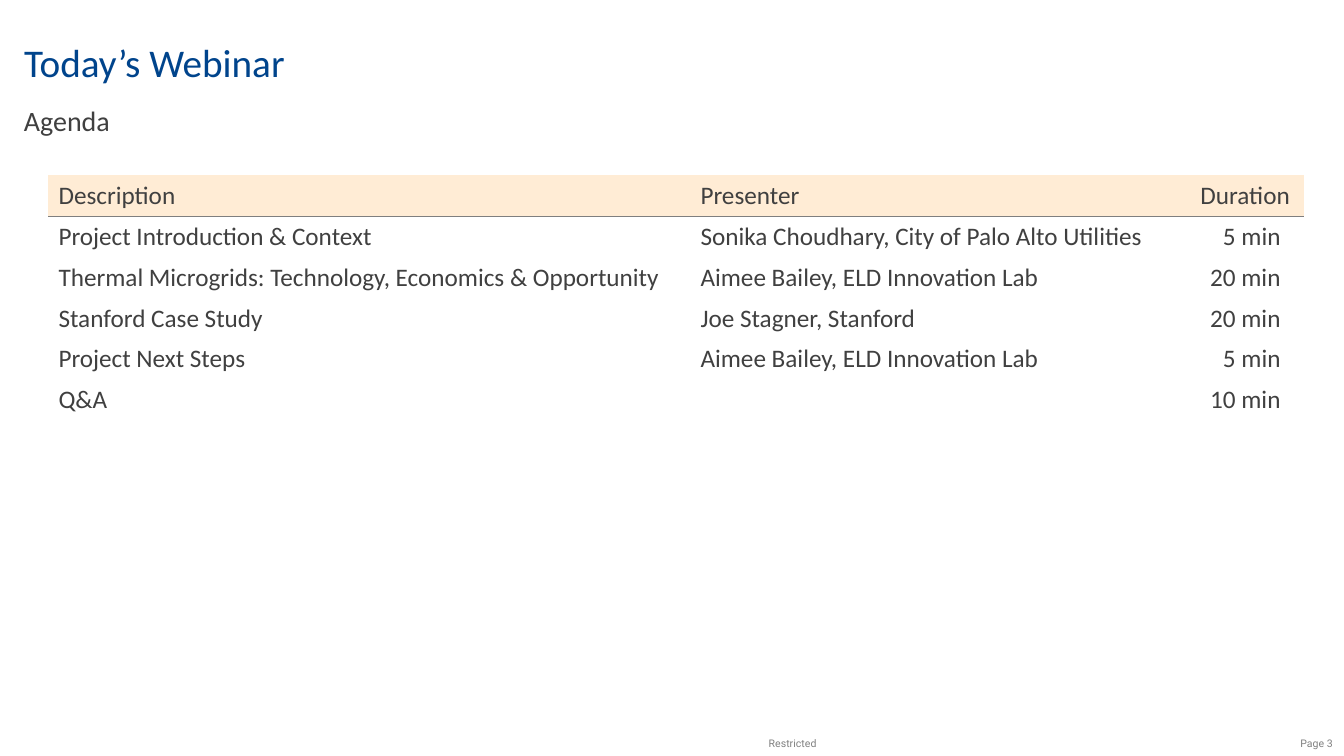
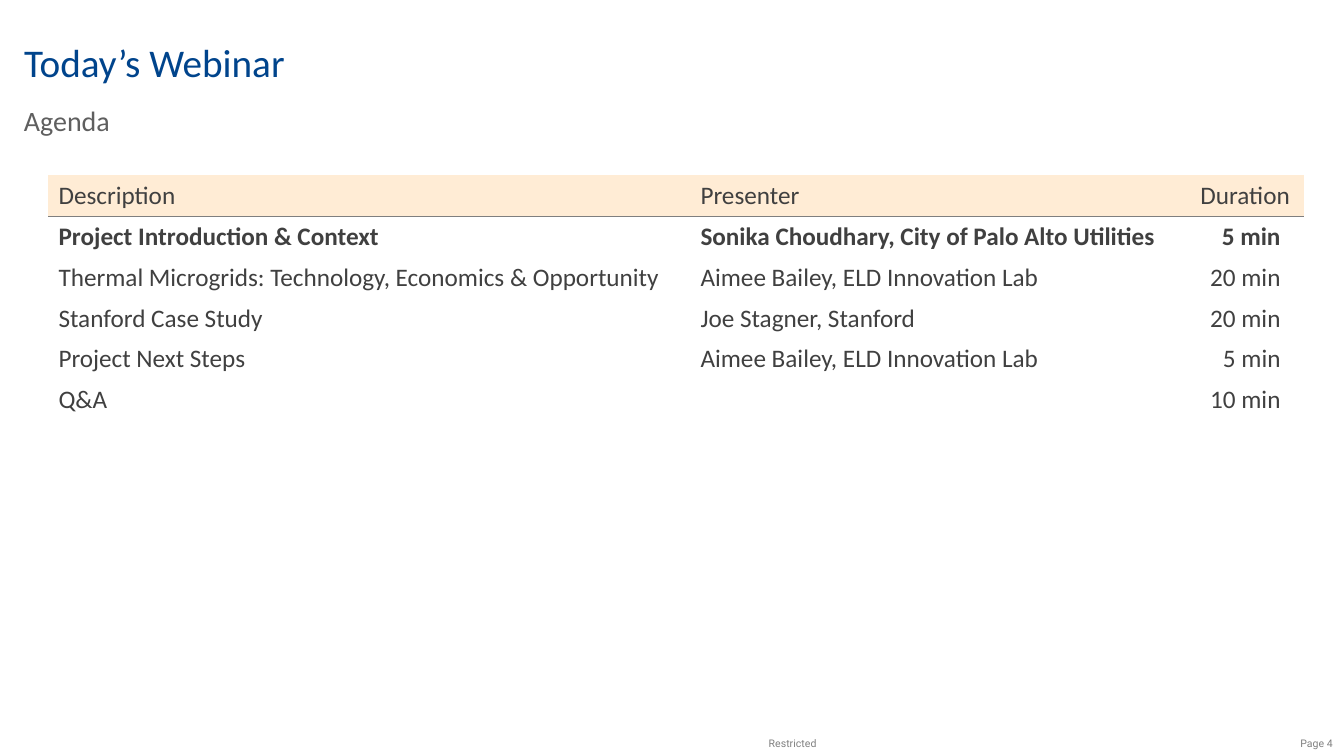
from pptx import Presentation
from pptx.dml.color import RGBColor
from pptx.enum.text import MSO_ANCHOR, PP_ALIGN
from pptx.oxml import parse_xml
from pptx.oxml.ns import nsdecls, qn
from pptx.util import Pt

NAVY = RGBColor(0x00, 0x44, 0x8C)
CHARCOAL = RGBColor(0x40, 0x40, 0x40)
SLATE = RGBColor(0x5F, 0x5F, 0x5F)
FOOTER_GRAY = RGBColor(0x80, 0x80, 0x80)
RULE_GRAY = RGBColor(0x7F, 0x7F, 0x7F)
CREAM = RGBColor(0xFF, 0xEC, 0xD5)

LEFT = PP_ALIGN.LEFT
RIGHT = PP_ALIGN.RIGHT
MIDDLE = MSO_ANCHOR.MIDDLE

PLAIN_TABLE = "{2D5ABB26-0587-4C30-8999-92F81FD0307C}"
TITLE_ONLY = 5
COLUMN_WIDTHS = (458.6, 357.1, 81.4)
ROW_HEIGHT = 29.2
DURATION_MARGIN = 17

AGENDA = (
    ("Description", "Presenter", "Duration"),
    ("Project Introduction & Context",
     "Sonika Choudhary, City of Palo Alto Utilities", "5 min"),
    ("Thermal Microgrids: Technology, Economics & Opportunity",
     "Aimee Bailey, ELD Innovation Lab", "20 min"),
    ("Stanford Case Study", "Joe Stagner, Stanford", "20 min"),
    ("Project Next Steps", "Aimee Bailey, ELD Innovation Lab", "5 min"),
    ("Q&A", "", "10 min"),
)


class Deck:
    def __init__(self):
        self.prs = Presentation()
        self.prs.slide_width = Pt(960)
        self.prs.slide_height = Pt(540)
        self.slide = None

    def style(self, paragraph, size, color, font="Calibri", bold=False, align=LEFT):
        paragraph.alignment = align
        paragraph.font.name = font
        paragraph.font.size = Pt(size)
        paragraph.font.bold = bold
        paragraph.font.color.rgb = color

    def add_slide(self, heading, page):
        self.slide = self.prs.slides.add_slide(self.prs.slide_layouts[TITLE_ONLY])
        self.title(heading)
        self.footer(page)

    def title(self, heading):
        title = self.slide.shapes.title
        title.left, title.top = Pt(10), Pt(22.3)
        title.width, title.height = Pt(934), Pt(43.2)
        title.text_frame.text = heading
        title.text_frame.vertical_anchor = MIDDLE
        self.style(title.text_frame.paragraphs[0], 28, NAVY)

    def footer(self, page):
        footer = self.slide.shapes.add_textbox(Pt(542), Pt(522.7), Pt(418), Pt(16.6))
        footer.text_frame.word_wrap = True
        paragraph = footer.text_frame.paragraphs[0]
        paragraph.text = f"Restricted\tPage {page}"
        tabs = parse_xml(
            f'<a:tabLst {nsdecls("a")}><a:tab pos="{Pt(403)}" algn="r"/></a:tabLst>')
        paragraph._p.get_or_add_pPr().append(tabs)
        self.style(paragraph, 7.5, FOOTER_GRAY, font="Roboto")

    def subtitle(self, text, color):
        subtitle = self.slide.shapes.add_textbox(Pt(10), Pt(70.6), Pt(77), Pt(31.7))
        subtitle.text_frame.word_wrap = False
        subtitle.text_frame.text = text
        self.style(subtitle.text_frame.paragraphs[0], 20, color)

    def header_fill(self, cell):
        cell.fill.solid()
        cell.fill.fore_color.rgb = CREAM
        rule = parse_xml(
            f'<a:lnB {nsdecls("a")} w="{Pt(1)}"><a:solidFill>'
            f'<a:srgbClr val="{RULE_GRAY}"/></a:solidFill></a:lnB>')
        cell._tc.get_or_add_tcPr().insert(0, rule)

    def agenda_table(self, rows, current=None):
        table = self.slide.shapes.add_table(
            len(rows), len(COLUMN_WIDTHS), Pt(34.6), Pt(125.3),
            Pt(sum(COLUMN_WIDTHS)), Pt(ROW_HEIGHT * len(rows))).table
        table._tbl.tblPr.find(qn("a:tableStyleId")).text = PLAIN_TABLE
        table.horz_banding = False
        for column, width in zip(table.columns, COLUMN_WIDTHS):
            column.width = Pt(width)
        for r, entries in enumerate(rows):
            table.rows[r].height = Pt(ROW_HEIGHT)
            for c, entry in enumerate(entries):
                cell = table.cell(r, c)
                cell.text = entry
                is_duration = r > 0 and c == len(entries) - 1
                if r == 0:
                    self.header_fill(cell)
                else:
                    cell.fill.background()
                if is_duration:
                    cell.margin_right = Pt(DURATION_MARGIN)
                self.style(cell.text_frame.paragraphs[0], 18, CHARCOAL,
                           bold=r == current, align=RIGHT if is_duration else LEFT)


def main():
    deck = Deck()
    for page, subtitle_color, current in ((3, CHARCOAL, None), (4, SLATE, 1)):
        deck.add_slide("Today’s Webinar", page)
        deck.subtitle("Agenda", subtitle_color)
        deck.agenda_table(AGENDA, current)
    deck.prs.save("out.pptx")


if __name__ == "__main__":
    main()
